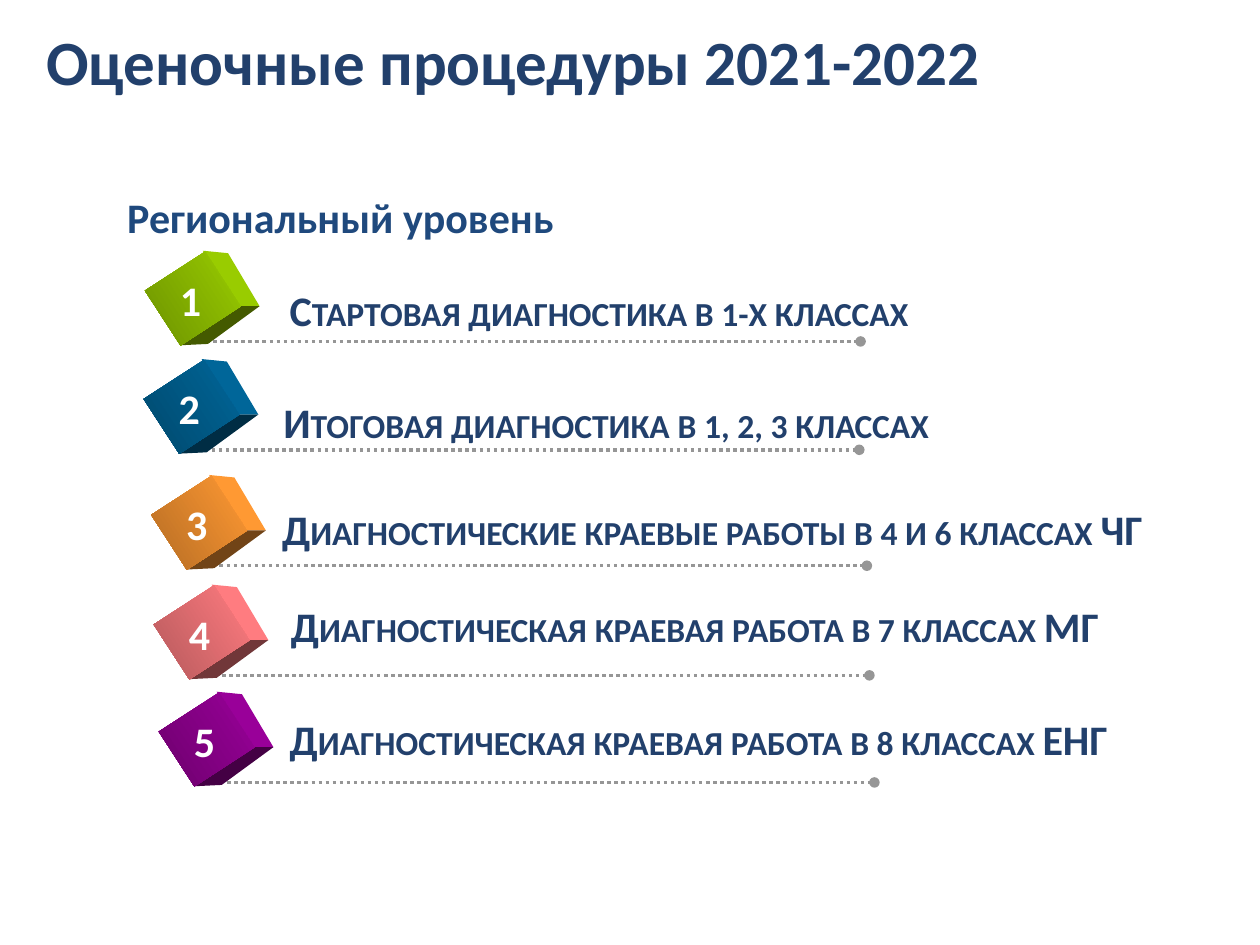
from pptx import Presentation
from pptx.dml.color import RGBColor
from pptx.enum.dml import MSO_LINE
from pptx.enum.shapes import MSO_CONNECTOR, MSO_SHAPE
from pptx.enum.text import MSO_AUTO_SIZE
from pptx.oxml.ns import qn
from pptx.util import Inches, Pt
from lxml.etree import SubElement

COLORS = {"title": "22406C", "level": "1F497D", "number": "FFFFFF", "line": "969696"}
LINE_LENGTH = 5.25

# Line start x, y; label x, y, width; label; cube gradient start, end; lower face
ROWS = [
    (1.58, 2.71, 2.2, 2.21, 5.27, "Стартовая диагностика в 1-х классах",
     "99CC00", "6D9200", "445A00"),
    (1.57, 3.57, 2.15, 3.1, 5.6, "Итоговая диагностика в 1, 2, 3 классах",
     "006699", "00496D", "002D44"),
    (1.63, 4.49, 2.14, 3.95, 7.28, "Диагностические краевые работы в 4 и 6 классах ЧГ",
     "FF9933", "B66D24", "714417"),
    (1.65, 5.36, 2.21, 4.72, 6.79, "Диагностическая краевая работа в 7 классах МГ",
     "FF7C80", "B6595C", "713739"),
    (1.69, 6.21, 2.2, 5.61, 6.87, "Диагностическая краевая работа в 8 классах ЕНГ",
     "990099", "6D006D", "440044"),
]

# Side faces of a cube, measured from the centre of its front face
RIGHT_FACE = [(0.08, -0.38), (0.28, -0.36), (0.53, 0.06), (0.35, 0.06)]
LOWER_FACE = [(0.35, 0.06), (0.53, 0.06), (0.12, 0.36), (-0.09, 0.37)]


def rgb(value):
    return RGBColor.from_string(value)


def add_text(s, x, y, w, h, text, size, color, wrap=False, small_caps=False):
    tf = s.shapes.add_textbox(Inches(x), Inches(y), Inches(w), Inches(h)).text_frame
    tf.word_wrap = wrap
    tf.auto_size = MSO_AUTO_SIZE.NONE if wrap else MSO_AUTO_SIZE.SHAPE_TO_FIT_TEXT
    r = tf.paragraphs[0].add_run()
    r.text = text
    r.font.name = "Calibri"
    r.font.size = Pt(size)
    r.font.bold = True
    r.font.color.rgb = rgb(color)
    if small_caps:
        r.font._element.set("cap", "small")


def add_dotted_line(s, x, y):
    """Draw a dotted rule that ends in a dot."""
    line = s.shapes.add_connector(MSO_CONNECTOR.STRAIGHT, Inches(x), Inches(y),
                                  Inches(x + LINE_LENGTH), Inches(y))
    line.line.color.rgb = rgb(COLORS["line"])
    line.line.width = Pt(2)
    line.line.dash_style = MSO_LINE.ROUND_DOT
    SubElement(line.line._get_or_add_ln(), qn("a:tailEnd"), type="oval")
    SubElement(line._element.spPr, qn("a:effectLst"))


def add_face(s, cx, cy, points, color):
    corners = [(Inches(cx + dx), Inches(cy + dy)) for dx, dy in points]
    builder = s.shapes.build_freeform(*corners[0])
    builder.add_line_segments(corners[1:], close=True)
    sp = builder.convert_to_shape()
    sp.shadow.inherit = False
    sp.fill.solid()
    sp.fill.fore_color.rgb = rgb(color)
    sp.line.fill.background()


def add_cube(s, cx, cy, start, end, lower):
    add_face(s, cx, cy, RIGHT_FACE, start)
    add_face(s, cx, cy, LOWER_FACE, lower)
    w, h = 0.52, 0.57
    sp = s.shapes.add_shape(MSO_SHAPE.RECTANGLE, Inches(cx - w / 2), Inches(cy - h / 2),
                            Inches(w), Inches(h))
    sp.rotation = 57
    sp.shadow.inherit = False
    sp.line.fill.background()
    sp.fill.gradient()
    sp.fill.gradient_angle = 270
    for stop, color in zip(sp.fill.gradient_stops, (start, end)):
        stop.color.rgb = rgb(color)


def add_row(s, number, row):
    x, y, label_x, label_y, label_w, label, start, end, lower = row
    add_dotted_line(s, x, y)
    add_cube(s, x - 0.05, y - 0.34, start, end, lower)
    add_text(s, label_x, label_y, label_w, 0.51, label, 24, COLORS["title"],
             small_caps=True)
    add_text(s, x - 0.25, y - 0.58, 0.37, 0.51, str(number), 24, COLORS["number"])


def main():
    prs = Presentation()
    prs.slide_width, prs.slide_height = Inches(10), Inches(7.5)
    s = prs.slides.add_slide(prs.slide_layouts[6])
    for number, row in enumerate(ROWS, 1):
        add_row(s, number, row)
    add_text(s, 0.27, 0.13, 9.3, 0.71, "Оценочные процедуры 2021-2022", 36,
             COLORS["title"], wrap=True)
    add_text(s, 0.91, 1.47, 3.62, 0.5, "Региональный уровень", 24, COLORS["level"])
    prs.save("out.pptx")


if __name__ == "__main__":
    main()
